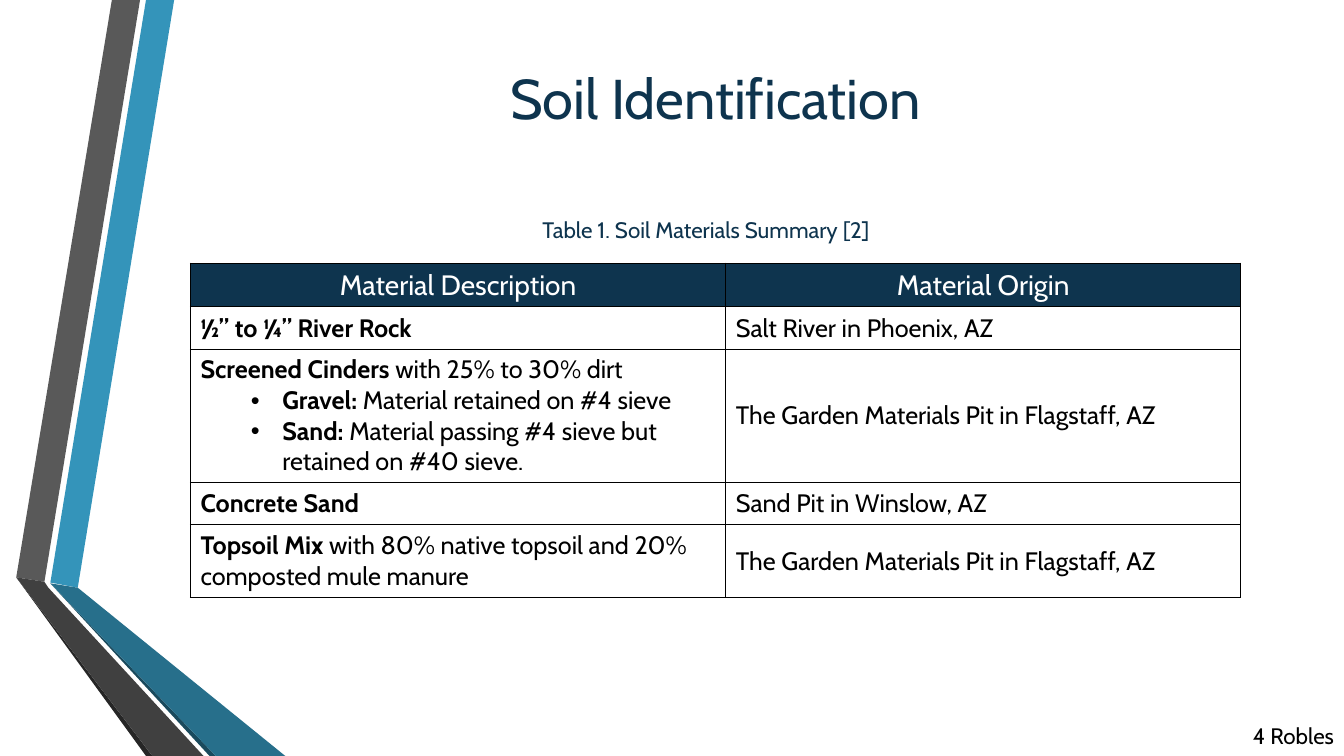
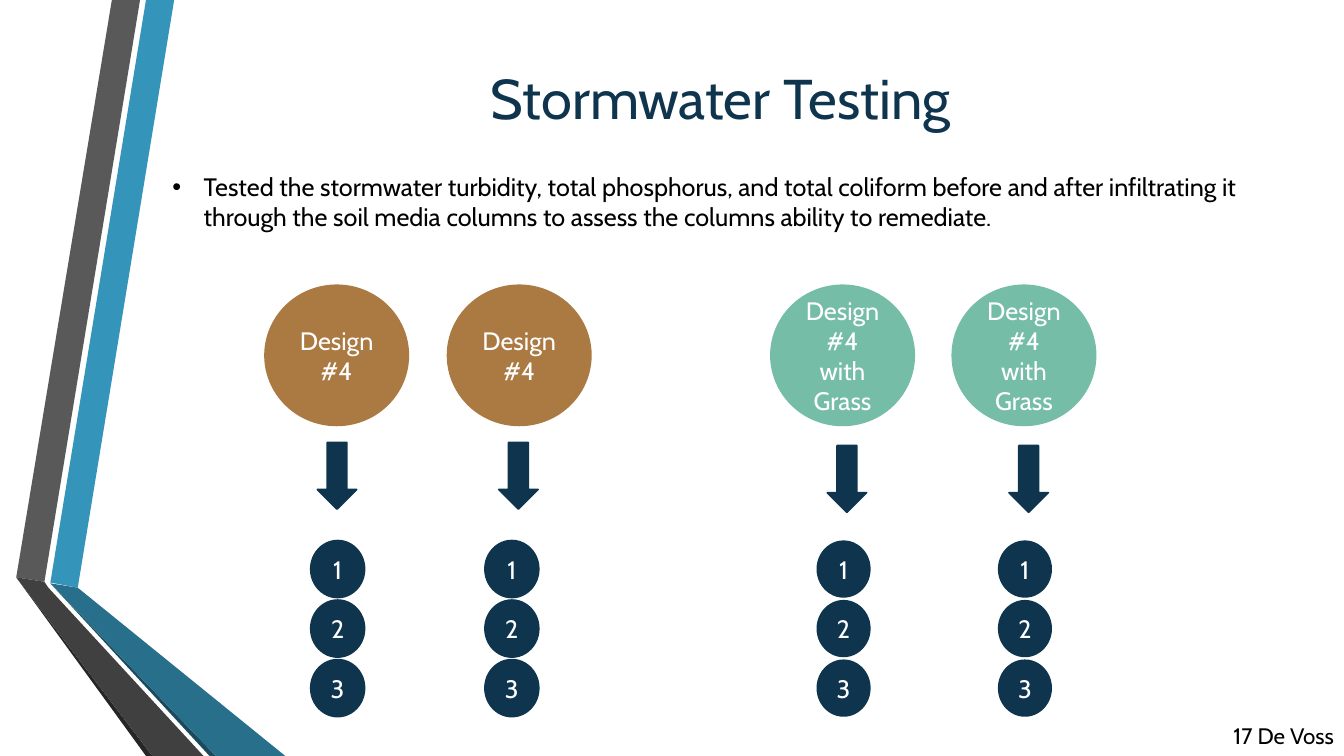
"""Build two slides on soil materials and stormwater testing."""
from lxml import etree
from pptx import Presentation
from pptx.dml.color import RGBColor
from pptx.enum.shapes import MSO_SHAPE
from pptx.enum.text import MSO_ANCHOR, MSO_AUTO_SIZE, PP_ALIGN
from pptx.oxml.ns import qn
from pptx.util import Cm, Pt

LEFT, CENTER, RIGHT = PP_ALIGN.LEFT, PP_ALIGN.CENTER, PP_ALIGN.RIGHT
TOP, MIDDLE = MSO_ANCHOR.TOP, MSO_ANCHOR.MIDDLE
ELLIPSE, DOWN_ARROW = MSO_SHAPE.OVAL, MSO_SHAPE.DOWN_ARROW
NO_FIT = MSO_AUTO_SIZE.NONE

FONT = "Cabin"
WIDTH, HEIGHT = 33.87, 19.05
COLORS = {
    "navy": "0E344E", "white": "FFFFFF", "black": "000000",
    "blue": "3494BA", "blue_dark": "276F8B", "blue_edge": "1A4A5D",
    "gray": "595959", "gray_dark": "404040", "gray_edge": "262626",
    "soil": "AB7942", "grass": "75BDA7",
}
BANDS = [
    ("blue", [(1.27, 14.68), (1.96, 14.81), (4.39, 0), (3.68, 0)]),
    ("gray", [(3.53, 0), (2.82, 0), (0.41, 14.55), (1.12, 14.66)]),
    ("gray_edge", [(0.41, 14.55), (3.68, HEIGHT), (3.84, HEIGHT)]),
    ("blue_edge", [(1.27, 14.7), (5.28, HEIGHT), (5.44, HEIGHT)]),
    ("blue_dark", [(1.27, 14.7), (5.44, HEIGHT), (7.19, HEIGHT), (1.96, 14.81)]),
    ("gray_dark", [(5.13, HEIGHT), (1.22, 14.81), (1.12, 14.66), (0.41, 14.55),
                   (3.84, HEIGHT)]),
]
HEADERS = ["Material Description", "Material Origin"]
PIT = "The Garden Materials Pit in Flagstaff, AZ"
MATERIALS = [
    ([("½” to ¼” River Rock", "")], "Salt River in Phoenix, AZ"),
    ([("Screened Cinders ", "with 25% to 30% dirt"),
      ("Gravel: ", "Material retained on #4 sieve"),
      ("Sand: ", "Material passing #4 sieve but retained on #40 sieve.")], PIT),
    ([("Concrete Sand", "")], "Sand Pit in Winslow, AZ"),
    ([("Topsoil Mix ", "with 80% native topsoil and 20% composted mule manure")], PIT),
]
COLUMN_WIDTHS = [13.49, 12.98]
ROW_HEIGHTS = [1.07, 1.07, 3.35, 1.07, 1.83]
TESTING = ("Tested the stormwater turbidity, total phosphorus, and total coliform "
           "before and after infiltrating it through the soil media columns to "
           "assess the columns ability to remediate.")
DESIGNS = [
    {"text": "Design #4", "color": "soil", "lefts": [(6.68, 8.0, 7.85), (11.28, 12.57, 12.24)],
     "arrow_top": 11.15, "sample_line": 2.25},
    {"text": "Design #4 with Grass", "color": "grass",
     "lefts": [(19.43, 20.85, 20.6), (24.0, 25.43, 25.17)],
     "arrow_top": 11.23, "sample_line": 1.25},
]
SAMPLES = ["1", "2", "3"]


def rgb(name):
    return RGBColor.from_string(COLORS[name])


def add_text(p, text, size=18, color="black", bold=False, align=LEFT):
    p.alignment = align
    r = p.add_run()
    r.text = text
    r.font.name, r.font.size, r.font.bold = FONT, Pt(size), bold
    r.font.color.rgb = rgb(color)


def add_bullet(p, left):
    pPr = p._p.get_or_add_pPr()
    pPr.set("marL", str(Cm(left)))
    pPr.set("indent", str(Cm(-0.79)))
    etree.SubElement(pPr, qn("a:buFont")).set("typeface", "Arial")
    etree.SubElement(pPr, qn("a:buChar")).set("char", "•")


def place(sp, left, top, width, height):
    sp.left, sp.top, sp.width, sp.height = Cm(left), Cm(top), Cm(width), Cm(height)


def add_label(s, text, box, anchor=TOP, **fmt):
    tf = s.shapes.add_textbox(*map(Cm, box)).text_frame
    tf.word_wrap, tf.vertical_anchor = True, anchor
    add_text(tf.paragraphs[0], text, **fmt)


def add_figure(s, kind, box, color, line=1.25, text=""):
    sp = s.shapes.add_shape(kind, *map(Cm, box))
    sp.shadow.inherit = False
    sp.fill.solid()
    sp.fill.fore_color.rgb = sp.line.color.rgb = rgb(color)
    sp.line.width = Pt(line)
    if text:
        sp.text_frame.vertical_anchor = MIDDLE
        add_text(sp.text_frame.paragraphs[0], text, color="white", align=CENTER)


def add_bands(prs, s):
    """Draw the bands through a slide and move them to the master."""
    for i, (color, points) in enumerate(BANDS):
        start, *rest = [(Cm(x), Cm(y)) for x, y in points]
        builder = s.shapes.build_freeform(*start)
        builder.add_line_segments(rest, close=True)
        sp = builder.convert_to_shape()
        sp.shadow.inherit = False
        sp.fill.solid()
        sp.fill.fore_color.rgb = rgb(color)
        sp.line.fill.background()
        sp.element.nvSpPr.cNvPr.set("id", str(100 + i))
        prs.slide_master.shapes.element.insert(2 + i, sp.element)


def new_slide(prs, layout, title, title_left, footer):
    s = prs.slides.add_slide(prs.slide_layouts[layout])
    place(s.shapes.title, title_left, 0, 27.84, 4.88)
    tf = s.shapes.title.text_frame
    tf.vertical_anchor, tf.auto_size = MIDDLE, NO_FIT
    add_text(tf.paragraphs[0], title, size=40, color="navy", align=CENTER)
    add_label(s, footer, (WIDTH - 4.85, 18.03, 4.85, 1.02), anchor=MIDDLE,
              size=16, align=RIGHT)
    return s


def style_cell(cell, fill=None):
    cell.vertical_anchor = MIDDLE
    for side in ("a:lnL", "a:lnR", "a:lnT", "a:lnB"):
        ln = etree.SubElement(cell._tc.get_or_add_tcPr(), qn(side), w=str(Pt(1)))
        solid = etree.SubElement(ln, qn("a:solidFill"))
        etree.SubElement(solid, qn("a:srgbClr")).set("val", COLORS["black"])
    if fill:
        cell.fill.solid()
        cell.fill.fore_color.rgb = rgb(fill)
    else:
        cell.fill.background()


def add_materials(s):
    box = (4.8, 6.63, sum(COLUMN_WIDTHS), sum(ROW_HEIGHTS))
    table = s.shapes.add_table(len(ROW_HEIGHTS), len(COLUMN_WIDTHS), *map(Cm, box)).table
    table.horz_banding = False
    for column, width in zip(table.columns, COLUMN_WIDTHS):
        column.width = Cm(width)
    for row, height in zip(table.rows, ROW_HEIGHTS):
        row.height = Cm(height)
    for col, header in enumerate(HEADERS):
        cell = table.cell(0, col)
        style_cell(cell, "navy")
        add_text(cell.text_frame.paragraphs[0], header, size=20, color="white", align=CENTER)
    for row, (description, origin) in enumerate(MATERIALS, 1):
        cell, origin_cell = table.cell(row, 0), table.cell(row, 1)
        style_cell(cell)
        style_cell(origin_cell)
        add_text(origin_cell.text_frame.paragraphs[0], origin)
        tf = cell.text_frame
        for i, (name, detail) in enumerate(description):
            p = tf.add_paragraph() if i else tf.paragraphs[0]
            add_text(p, name, bold=True)
            if detail:
                add_text(p, detail)
            if i:
                p.level = 1
                add_bullet(p, 2.06)


def add_designs(s):
    for design in DESIGNS:
        for column_left, arrow_left, sample_left in design["lefts"]:
            add_figure(s, ELLIPSE, (column_left, 7.19, 3.61, 3.53), design["color"],
                       text=design["text"])
            add_figure(s, DOWN_ARROW, (arrow_left, design["arrow_top"], 0.99, 1.68), "navy")
            for i, sample in enumerate(SAMPLES):
                add_figure(s, ELLIPSE, (sample_left, 13.64 + 1.5 * i, 1.32, 1.4), "navy",
                           line=design["sample_line"], text=sample)


def main():
    prs = Presentation()
    prs.slide_width, prs.slide_height = Cm(WIDTH), Cm(HEIGHT)

    s = new_slide(prs, 5, "Soil Identification", 4.11, "4 Robles")
    add_bands(prs, s)
    add_materials(s)
    add_label(s, "Table 1. Soil Materials Summary [2]", (13.23, 5.31, 9.12, 0.94),
              size=16, color="navy", align=CENTER)

    s = new_slide(prs, 1, "Stormwater Testing", 4.24, "17 De Voss")
    add_designs(s)
    body = s.placeholders[1]
    place(body, 4.09, 4.19, 27.76, 1.8)
    body.text_frame.auto_size = NO_FIT
    p = body.text_frame.paragraphs[0]
    p.space_before = Pt(0)
    add_text(p, TESTING)
    add_bullet(p, 0.79)

    prs.save("out.pptx")


if __name__ == "__main__":
    main()
